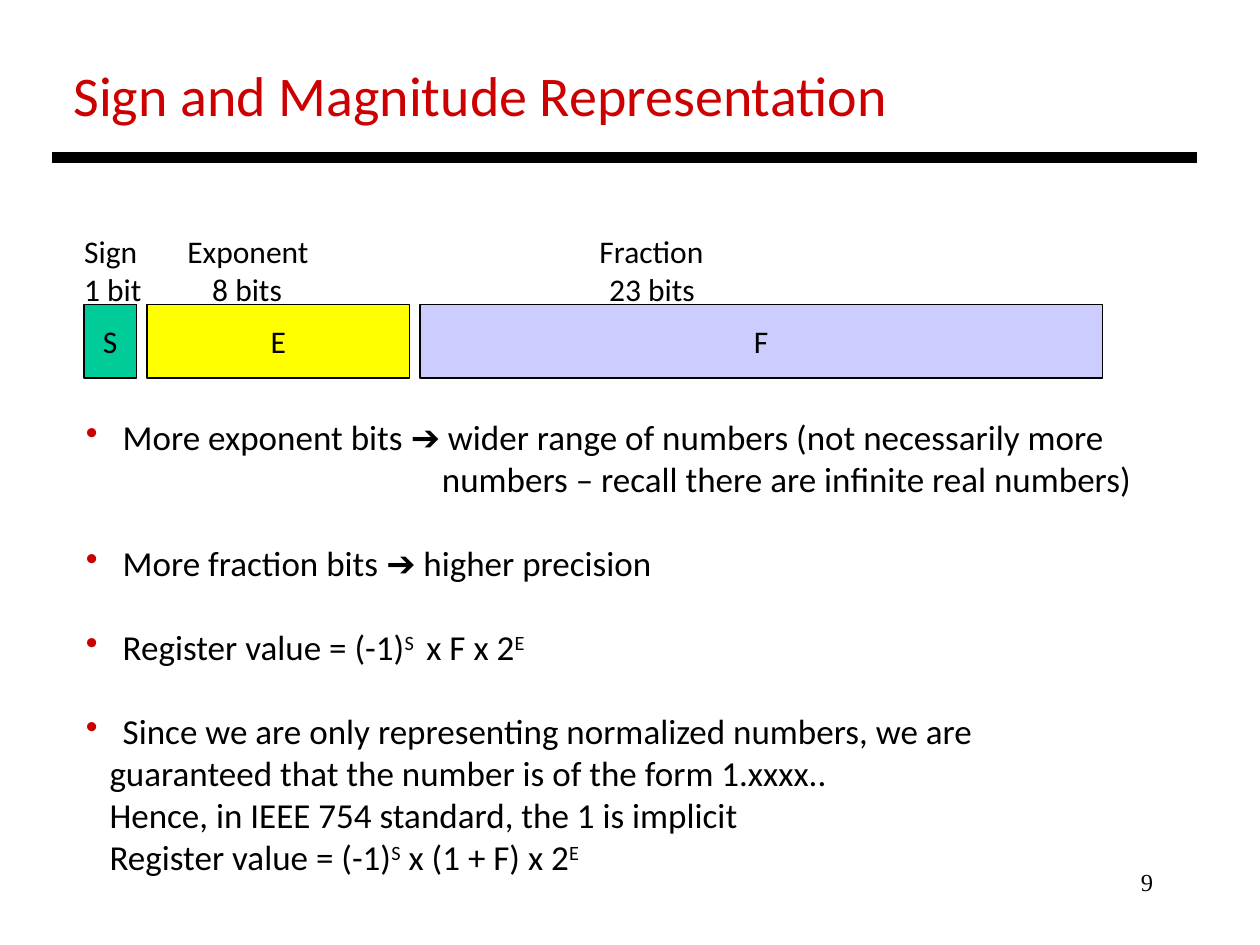
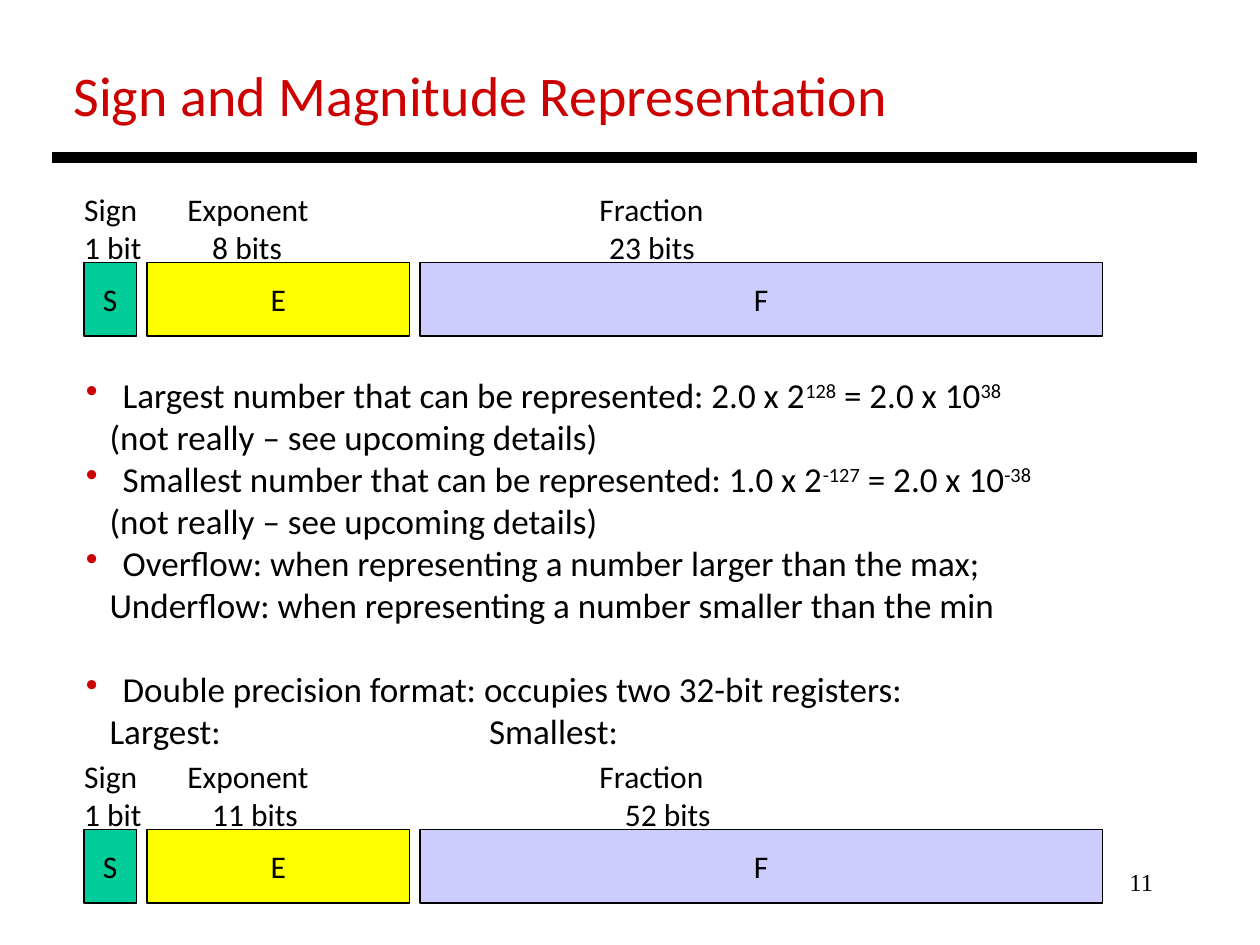
from dataclasses import dataclass

from lxml import etree
from pptx import Presentation
from pptx.dml.color import RGBColor
from pptx.enum import shapes, text
from pptx.oxml import ns
from pptx.util import Pt

BLACK = RGBColor(0x00, 0x00, 0x00)
RED = RGBColor(0xCC, 0x00, 0x00)
GREEN = RGBColor(0x00, 0xCC, 0x99)
YELLOW = RGBColor(0xFF, 0xFF, 0x00)
LAVENDER = RGBColor(0xCC, 0xCC, 0xFF)

BODY_FONT = "Calibri"
NUMBER_FONT = "Times New Roman"
TITLE = "Sign and Magnitude Representation"
LABEL_SIZE = 18
BODY_SIZE = 20
BODY_LINE = 24
BULLET_INDENT = 21
FOLLOW_INDENT = 13.5
REGISTER_HEIGHT = 42


@dataclass(frozen=True)
class Field:
    """One field of a register."""

    letter: str
    left: float
    width: float
    fill: RGBColor


@dataclass(frozen=True)
class Register:
    """A register with the bit counts written above it."""

    top: float
    exponent_bits: str
    fraction_bits: str
    fraction_stop: float


@dataclass(frozen=True)
class Line:
    """One line of body text; every second span is a superscript."""

    spans: tuple[str, ...]
    bullet: bool = False
    gap: bool = False
    indent: float = FOLLOW_INDENT
    stops: tuple[float, ...] = ()


@dataclass(frozen=True)
class Content:
    """What differs from one slide to the next."""

    number: str
    body_top: float
    body_height: float
    registers: tuple[Register, ...]
    lines: tuple[Line, ...]


FIELDS = (
    Field("S", 48, 30, GREEN),
    Field("E", 84, 150, YELLOW),
    Field("F", 240, 390, LAVENDER),
)

SLIDES = (
    Content("9", 234, 274, (Register(174, "8 bits", "23 bits", 300),), (
        Line(("More exponent bits ➔ wider range of numbers (not necessarily more",), bullet=True),
        Line(("numbers – recall there are infinite real numbers)",), indent=203.4),
        Line(("More fraction bits ➔ higher precision",), bullet=True, gap=True),
        Line(("Register value = (-1)", "S ", " x F x 2", "E"), bullet=True, gap=True),
        Line(("Since we are only representing normalized numbers, we are",), bullet=True, gap=True),
        Line(("guaranteed that the number is of the form 1.xxxx..",)),
        Line(("Hence, in IEEE 754 standard, the 1 is implicit",)),
        Line(("Register value = (-1)", "S", " x (1 + F) x 2", "E")),
    )),
    Content("11", 210, 225, (
        Register(150, "8 bits", "23 bits", 300),
        Register(474, "11 bits", "52 bits", 309),
    ), (
        Line(("Largest number that can be represented: 2.0 x 2", "128", " = 2.0 x 10", "38"), bullet=True),
        Line(("(not really – see upcoming details)",)),
        Line(("Smallest number that can be represented: 1.0 x 2", "-127", " = 2.0 x 10", "-38"), bullet=True),
        Line(("(not really – see upcoming details)",)),
        Line(("Overflow: when representing a number larger than the max;",), bullet=True),
        Line(("Underflow: when representing a number smaller than the min",)),
        Line(("Double precision format: occupies two 32-bit registers:",), bullet=True, gap=True),
        Line(("\tLargest:\tSmallest:",), indent=0, stops=(FOLLOW_INDENT, 230.4)),
    )),
)


def add_span(para, words: str, size: float, color: RGBColor = BLACK, font: str = BODY_FONT):
    """Add one formatted run to a paragraph."""
    span = para.add_run()
    span.text = words
    span.font.size = Pt(size)
    span.font.name = font
    span.font.color.rgb = color
    return span


def add_frame(page, left: float, top: float, width: float, height: float):
    """Add a wrapping text box and return its text frame."""
    frame = page.shapes.add_textbox(Pt(left), Pt(top), Pt(width), Pt(height)).text_frame
    frame.word_wrap = True
    return frame


def next_para(frame, index: int):
    """Return the first paragraph, or a new one after it."""
    return frame.add_paragraph() if index else frame.paragraphs[0]


def set_bullet(para) -> None:
    """Give a paragraph a red hanging bullet."""
    props = para._p.get_or_add_pPr()
    props.set("marL", str(Pt(BULLET_INDENT)))
    props.set("indent", str(-Pt(BULLET_INDENT)))
    color = etree.SubElement(props, ns.qn("a:buClr"))
    etree.SubElement(color, ns.qn("a:srgbClr"), val=str(RED))
    etree.SubElement(props, ns.qn("a:buChar"), char="•")


def set_stops(para, stops: tuple[float, ...]) -> None:
    """Set left tab stops on a paragraph."""
    tabs = etree.SubElement(para._p.get_or_add_pPr(), ns.qn("a:tabLst"))
    for stop in stops:
        etree.SubElement(tabs, ns.qn("a:tab"), pos=str(Pt(stop)), algn="l")


def add_frame_parts(page, number: str) -> None:
    """Draw the page number, the title and the rule below it."""
    para = add_frame(page, 516, 492, 150, 36).paragraphs[0]
    para.alignment = text.PP_ALIGN.RIGHT
    add_span(para, number, 14, font=NUMBER_FONT)
    add_span(add_frame(page, 34.8, 31, 500, 46).paragraphs[0], TITLE, 32, RED)
    rule = page.shapes.add_connector(
        shapes.MSO_CONNECTOR.STRAIGHT, Pt(30), Pt(90), Pt(684), Pt(90))
    rule.line.color.rgb = BLACK
    rule.line.width = Pt(6)
    etree.SubElement(rule._element.spPr, ns.qn("a:effectLst"))


def add_register(page, register: Register) -> None:
    """Draw a register and its labels."""
    labels = (
        ("Sign\tExponent\tFraction", (59, 294.5)),
        (f"1 bit\t{register.exponent_bits}\t{register.fraction_bits}",
         (73.2, register.fraction_stop)),
    )
    frame = add_frame(page, 41, register.top - 45, 400, 51)
    for index, (words, stops) in enumerate(labels):
        para = next_para(frame, index)
        set_stops(para, stops)
        add_span(para, words, LABEL_SIZE)
    for field in FIELDS:
        box = page.shapes.add_shape(
            shapes.MSO_SHAPE.RECTANGLE, Pt(field.left), Pt(register.top),
            Pt(field.width), Pt(REGISTER_HEIGHT))
        box.shadow.inherit = False
        box.fill.solid()
        box.fill.fore_color.rgb = field.fill
        box.line.color.rgb = BLACK
        box.line.width = Pt(0.75)
        box.text_frame.word_wrap = False
        box.text_frame.vertical_anchor = text.MSO_ANCHOR.MIDDLE
        para = box.text_frame.paragraphs[0]
        para.alignment = text.PP_ALIGN.CENTER
        add_span(para, field.letter, LABEL_SIZE)


def add_body(page, content: Content) -> None:
    """Write the body lines with bullets, indents and superscripts."""
    frame = add_frame(page, 42, content.body_top, 630, content.body_height)
    for index, line in enumerate(content.lines):
        para = next_para(frame, index)
        if line.gap:
            para.space_before = Pt(BODY_LINE)
        if line.bullet:
            set_bullet(para)
        else:
            para._p.get_or_add_pPr().set("marL", str(Pt(line.indent)))
        if line.stops:
            set_stops(para, line.stops)
        for position, words in enumerate(line.spans):
            span = add_span(para, words, BODY_SIZE)
            if position % 2:
                span._r.get_or_add_rPr().set("baseline", "30000")


def main() -> None:
    """Build the deck and save it."""
    deck = Presentation()
    deck.slide_width, deck.slide_height = Pt(720), Pt(540)
    for content in SLIDES:
        page = deck.slides.add_slide(deck.slide_layouts[6])
        add_frame_parts(page, content.number)
        first, *others = content.registers
        add_register(page, first)
        add_body(page, content)
        for register in others:
            add_register(page, register)
    deck.save("out.pptx")


if __name__ == "__main__":
    main()
